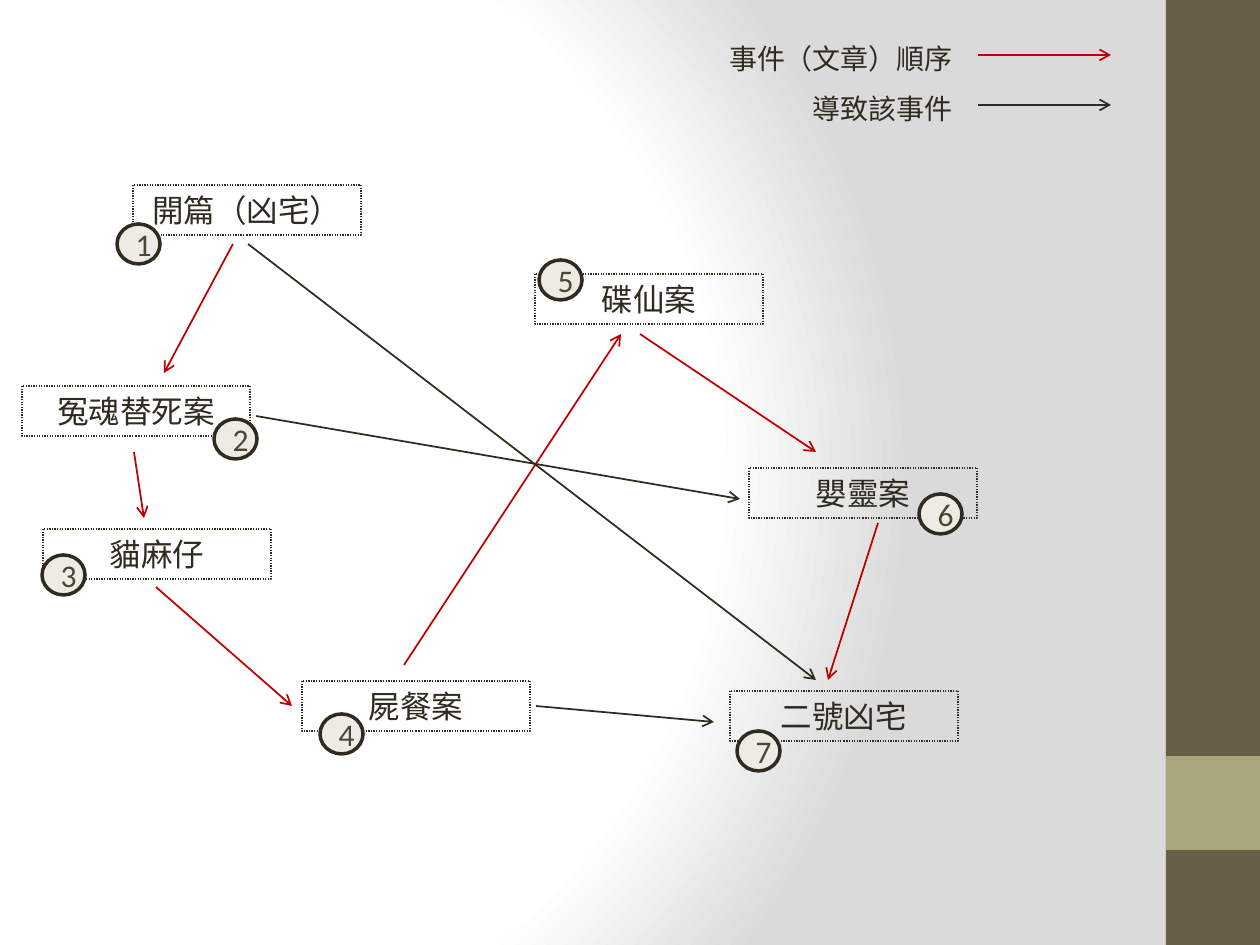
from lxml import etree
from pptx import Presentation
from pptx import util as u
from pptx.dml.color import RGBColor
from pptx.enum import dml, shapes, text
from pptx.oxml import parse_xml
from pptx.oxml.ns import nsdecls, qn

INK = RGBColor(0x2F, 0x2B, 0x20)
RED = RGBColor(0xC0, 0x00, 0x00)
BROWN = RGBColor(0x67, 0x5E, 0x47)
OLIVE = RGBColor(0xA9, 0xA5, 0x7C)
CREAM = RGBColor(0xEE, 0xEB, 0xE5)
DIGIT = RGBColor(0x4D, 0x46, 0x35)
WHITE = RGBColor(0xFF, 0xFF, 0xFF)
GREY = RGBColor(0xDA, 0xDA, 0xDA)

FONT = "Calibri"
BOX_SIZE = (228, 50)
BADGE_SIZE = (43, 40)

BACKGROUND_STOPS = [(0, WHITE), (75, WHITE), (100, GREY)]
SIDE_BARS = [((1166, 0, 94, 945), BROWN), ((1166, 756, 94, 94), OLIVE)]

# Events in story order: name, box corner, number badge corner
EVENTS = [
    ("開篇（凶宅）", (133, 185), (117, 224)),
    ("冤魂替死案", (22, 386), (214, 419)),
    ("貓麻仔", (43, 529), (42, 555)),
    ("屍餐案", (302, 681), (320, 714)),
    ("碟仙案", (535, 274), (539, 260)),
    ("嬰靈案", (749, 468), (919, 494)),
    ("二號凶宅", (730, 691), (737, 731)),
]
SEQUENCE_ARROWS = [
    (233, 244, 164, 373),
    (134, 452, 144, 518),
    (156, 587, 292, 706),
    (404, 665, 621, 334),
    (640, 334, 816, 452),
    (878, 523, 828, 680),
]
CAUSE_ARROWS = [
    (248, 244, 816, 680),
    (256, 416, 740, 499),
    (536, 706, 714, 722),
]
LEGEND = [("事件（文章）順序", RED), ("導致該事件", INK)]
LEGEND_TOP, LEGEND_STEP = 35, 50


def px(*lengths):
    return [u.Emu(round(length * 914400 / 126)) for length in lengths]


def set_background(slide):
    slide.background.fill.gradient()
    gradient = slide.element.find(".//" + qn("a:gradFill"))
    stops = "".join(
        f'<a:gs pos="{position * 1000}"><a:srgbClr val="{color}"/></a:gs>'
        for position, color in BACKGROUND_STOPS
    )
    radial = parse_xml(
        f'<a:gradFill {nsdecls("a")} rotWithShape="1"><a:gsLst>{stops}</a:gsLst>'
        '<a:path path="circle">'
        '<a:fillToRect l="20000" t="50000" r="100000" b="50000"/>'
        "</a:path></a:gradFill>"
    )
    gradient.getparent().replace(gradient, radial)


def add_shape(slide, kind, area, fill=None, line=None, width=1.0):
    shape = slide.shapes.add_shape(kind, *px(*area))
    shape.shadow.inherit = False
    if fill is None:
        shape.fill.background()
    else:
        shape.fill.solid()
        shape.fill.fore_color.rgb = fill
    if line is None:
        shape.line.fill.background()
    else:
        shape.line.color.rgb = line
        shape.line.width = u.Pt(width)
    return shape


def write(shape, words, size=18, color=INK, align=text.PP_ALIGN.CENTER,
          anchor=text.MSO_ANCHOR.TOP, grow=True):
    frame = shape.text_frame
    frame.word_wrap = True
    frame.vertical_anchor = anchor
    if grow:
        frame.auto_size = text.MSO_AUTO_SIZE.SHAPE_TO_FIT_TEXT
    paragraph = frame.paragraphs[0]
    paragraph.alignment = align
    run = paragraph.add_run()
    run.text = words
    run.font.name = FONT
    run.font.size = u.Pt(size)
    run.font.color.rgb = color


def add_arrow(slide, ends, color):
    arrow = slide.shapes.add_connector(shapes.MSO_CONNECTOR.STRAIGHT, *px(*ends))
    arrow.line.color.rgb = color
    arrow.line.width = u.Pt(1)
    etree.SubElement(arrow.line._get_or_add_ln(), qn("a:tailEnd"), type="arrow")
    etree.SubElement(arrow.element.spPr, qn("a:effectLst"))


def main():
    presentation = Presentation()
    presentation.slide_width, presentation.slide_height = px(1260, 945)
    slide = presentation.slides.add_slide(presentation.slide_layouts[6])
    set_background(slide)

    for area, color in SIDE_BARS:
        add_shape(slide, shapes.MSO_SHAPE.RECTANGLE, area, fill=color)

    for name, corner, _ in EVENTS:
        box = add_shape(slide, shapes.MSO_SHAPE.RECTANGLE, corner + BOX_SIZE,
                        line=INK, width=0.75)
        box.line.dash_style = dml.MSO_LINE.ROUND_DOT
        write(box, name)

    for arrows, color in ((SEQUENCE_ARROWS, RED), (CAUSE_ARROWS, INK)):
        for ends in arrows:
            add_arrow(slide, ends, color)

    for number, (_, _, corner) in enumerate(EVENTS, start=1):
        badge = add_shape(slide, shapes.MSO_SHAPE.OVAL, corner + BADGE_SIZE,
                          fill=CREAM, line=INK, width=2)
        write(badge, str(number), color=DIGIT,
              anchor=text.MSO_ANCHOR.MIDDLE, grow=False)

    for row, (label, color) in enumerate(LEGEND):
        top = LEGEND_TOP + row * LEGEND_STEP
        add_arrow(slide, (978, top + 20, 1111, top + 20), color)
        caption = slide.shapes.add_textbox(*px(692, top, 273, 47))
        write(caption, label, size=16, align=text.PP_ALIGN.RIGHT)

    presentation.save("out.pptx")


if __name__ == "__main__":
    main()
